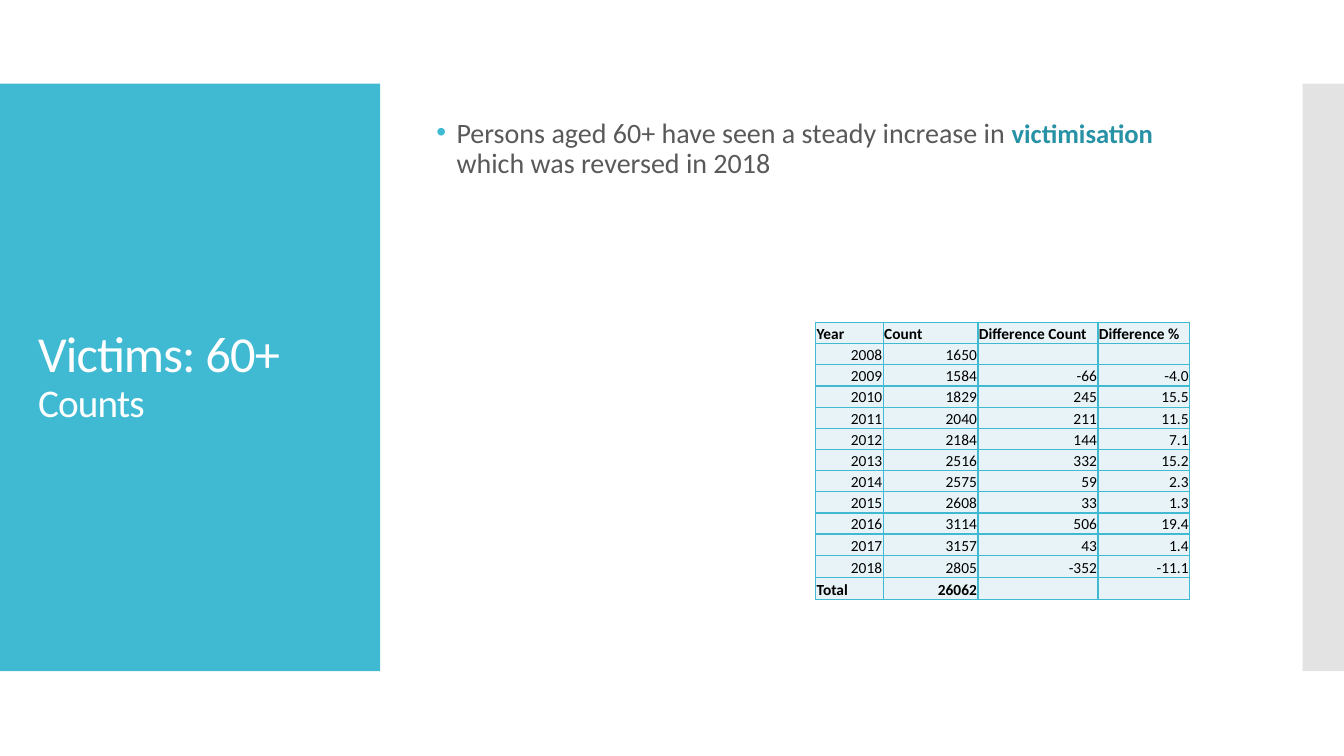
from lxml import etree
from pptx import Presentation
from pptx.dml.color import RGBColor
from pptx.enum.shapes import MSO_SHAPE
from pptx.enum.text import MSO_ANCHOR, PP_ALIGN
from pptx.oxml import parse_xml
from pptx.oxml.ns import nsdecls, qn
from pptx.util import Inches, Pt

TEAL = RGBColor(0x40, 0xBA, 0xD2)
DARK_TEAL = RGBColor(0x27, 0x91, 0xA6)
SILVER = RGBColor(0xC8, 0xC8, 0xC8)
GRAY = RGBColor(0x59, 0x59, 0x59)
PALE = RGBColor(0xE8, 0xF3, 0xF7)
WHITE = RGBColor(0xFF, 0xFF, 0xFF)
BLACK = RGBColor(0, 0, 0)
FONT = "Calibri"

HEADERS = ["Year", "Count", "Difference Count", "Difference %"]
FIRST_YEAR = 2008
COUNTS = [1650, 1584, 1829, 2040, 2184, 2516, 2575, 2608, 3114, 3157, 2805]
COL_WIDTHS = [0.67, 0.94, 1.19, 0.91]


def add_run(p, text, size, color, bold=False):
    r = p.add_run()
    r.text = text
    f = r.font
    f.name, f.size, f.bold = FONT, Pt(size), bold
    f.color.rgb = color
    return r


def add_band(s, x, y, w, h, color):
    sp = s.shapes.add_shape(MSO_SHAPE.RECTANGLE, Inches(x), Inches(y), Inches(w), Inches(h))
    sp.shadow.inherit = False
    sp.fill.solid()
    sp.fill.fore_color.rgb = color
    sp.line.fill.background()
    return sp


def add_text_box(s, x, y, w, h, anchor):
    """Add a wrapping box and return its first paragraph."""
    tf = s.shapes.add_textbox(Inches(x), Inches(y), Inches(w), Inches(h)).text_frame
    tf.word_wrap = True
    tf.vertical_anchor = anchor
    p = tf.paragraphs[0]
    p.line_spacing = 0.9
    return p


def add_title_panel(s, x, y, w, h):
    add_band(s, x, y, w, h, TEAL)
    p = add_text_box(s, x + 0.28, y + 0.4, w - 0.55, h - 0.8, MSO_ANCHOR.MIDDLE)
    title = add_run(p, "Victims: 60+", 36, WHITE)
    p.add_line_break()
    subtitle = add_run(p, "Counts", 28, WHITE)
    for r in (title, subtitle):
        r.font._element.set("spc", "-60")


def add_edge_band(s, x, y, w, h):
    sp = add_band(s, x, y, w, h, SILVER)
    color = sp.fill._xPr.find(".//" + qn("a:srgbClr"))
    etree.SubElement(color, qn("a:alpha"), val="50000")


def add_finding(s, x, y, w, h):
    p = add_text_box(s, x, y, w, h, MSO_ANCHOR.TOP)
    pPr = p._p.get_or_add_pPr()
    pPr.set("marL", str(Inches(0.2)))
    pPr.set("indent", str(Inches(-0.2)))
    for xml in (f'<a:buClr {nsdecls("a")}><a:srgbClr val="{TEAL}"/></a:buClr>',
                f'<a:buFont {nsdecls("a")} typeface="Arial"/>',
                f'<a:buChar {nsdecls("a")} char="•"/>'):
        pPr.append(parse_xml(xml))
    add_run(p, "Persons aged 60+ have seen a steady increase in ", 20, GRAY)
    add_run(p, "victimisation", 19, DARK_TEAL, True)
    add_run(p, " which was reversed in 2018", 20, GRAY)


def count_rows():
    """Return the table's rows, with yearly changes worked out from the counts."""
    rows = [HEADERS, [str(FIRST_YEAR), str(COUNTS[0]), "", ""]]
    for i, (before, count) in enumerate(zip(COUNTS, COUNTS[1:]), 1):
        change = count - before
        rows.append([str(FIRST_YEAR + i), str(count), str(change), f"{100 * change / before:.1f}"])
    return rows + [["Total", str(sum(COUNTS)), "", ""]]


def style_cell(cell):
    cell.margin_left = cell.margin_right = cell.margin_top = Inches(0.01)
    cell.margin_bottom = 0
    cell.vertical_anchor = MSO_ANCHOR.BOTTOM
    tcPr = cell._tc.get_or_add_tcPr()
    for side in ("lnL", "lnR", "lnT", "lnB"):
        tcPr.append(parse_xml(
            f'<a:{side} {nsdecls("a")} w="{Pt(1)}"><a:solidFill>'
            f'<a:srgbClr val="{TEAL}"/></a:solidFill></a:{side}>'))
    cell.fill.solid()
    cell.fill.fore_color.rgb = PALE


def add_counts_table(s, x, y, w, h):
    rows = count_rows()
    last = len(rows) - 1
    table = s.shapes.add_table(len(rows), len(HEADERS), Inches(x), Inches(y),
                               Inches(w), Inches(h)).table
    for col, width in zip(table.columns, COL_WIDTHS):
        col.width = Inches(width)
    for i, row in enumerate(rows):
        table.rows[i].height = Inches(0.22 if i >= last - 1 else 0.21)
        for j, text in enumerate(row):
            cell = table.cell(i, j)
            style_cell(cell)
            p = cell.text_frame.paragraphs[0]
            if text:
                is_label = i == 0 or text == "Total"
                p.alignment = PP_ALIGN.LEFT if is_label else PP_ALIGN.RIGHT
                add_run(p, text, 11, BLACK, i in (0, last))
            else:
                etree.SubElement(p._p, qn("a:endParaRPr"), sz="1100")


def main():
    prs = Presentation()
    prs.slide_width, prs.slide_height = Inches(13.33), Inches(7.5)
    s = prs.slides.add_slide(prs.slide_layouts[6])
    add_title_panel(s, 0, 0.83, 3.77, 5.83)
    add_edge_band(s, 12.92, 0.83, 0.41, 5.83)
    add_finding(s, 4.23, 1.13, 8, 0.75)
    add_counts_table(s, 8.09, 3.2, sum(COL_WIDTHS), 2.75)
    prs.save("out.pptx")


if __name__ == "__main__":
    main()
